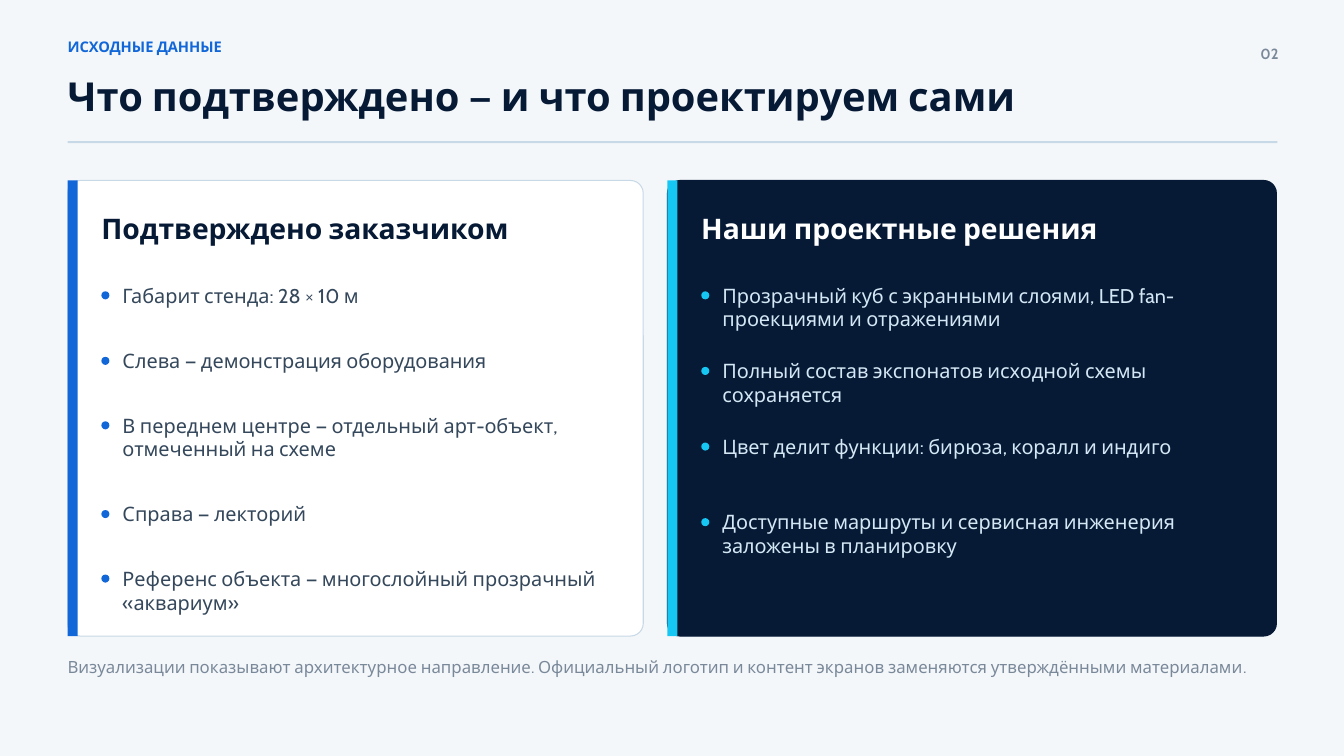
from pptx import Presentation
from pptx.dml.color import RGBColor
from pptx.enum import shapes, text
from pptx.util import Inches, Pt

NAVY, BLUE, CYAN = "061A35", "1167D8", "17C7F3"
WHITE, RULE, GREY = "FFFFFF", "C7D8E6", "7A899A"
KIND = shapes.MSO_SHAPE

deck = Presentation()
deck.slide_width, deck.slide_height = Inches(13.33), Inches(7.5)
slide = deck.slides.add_slide(deck.slide_layouts[6])


def paint(target, color):
    target.solid()
    target.fore_color.rgb = RGBColor.from_string(color)


def add_item(box, color, words=None, size=14.2, bold=False, kind=KIND.RECTANGLE, outline=None):
    """Add a text line when words are given, otherwise a filled shape."""
    place = [Inches(length) for length in box]
    if words is None:
        item = slide.shapes.add_shape(kind, *place)
        item.shadow.inherit = False
        paint(item.fill, color)
        if outline:
            paint(item.line.fill, outline)
            item.line.width = Pt(0.75)
        else:
            item.line.fill.background()
        return item
    frame = slide.shapes.add_textbox(*place).text_frame
    for name, value in {"margin_left": 0, "margin_top": 0, "margin_right": 0,
                        "margin_bottom": 0, "word_wrap": True}.items():
        setattr(frame, name, value)
    line = frame.paragraphs[0]
    run = line.add_run()
    run.text = words
    for name, value in {"name": "Cabin", "size": Pt(size), "bold": bold}.items():
        setattr(run.font, name, value)
    paint(run.font.fill, color)
    return line


paint(slide.background.fill, "F4F7FA")

# Header
add_item((0.67, 0.38, 7.29, 0.23), BLUE, "ИСХОДНЫЕ ДАННЫЕ", 10.5, True)
add_item((0.67, 0.71, 11.25, 0.6), NAVY, "Что подтверждено — и что проектируем сами", 28.5, True)
page_number = add_item((12.24, 0.44, 0.44, 0.25), GREY, "02", 10.5, True)
page_number.alignment = text.PP_ALIGN.RIGHT
add_item((0.67, 1.4, 12, 0.02), RULE)

# Two cards: geometry, colours, heading, then (top, wording) of each point
cards = [
    dict(left=0.67, width=5.71, fill=WHITE, outline=RULE, accent=BLUE,
         heading="Подтверждено заказчиком", heading_color=NAVY,
         point_color="34475B", point_width=4.69,
         points=[(2.81, "Габарит стенда: 28 × 10 м"),
                 (3.46, "Слева — демонстрация оборудования"),
                 (4.1, "В переднем центре — отдельный арт-объект, отмеченный на схеме"),
                 (4.98, "Справа — лекторий"),
                 (5.62, "Референс объекта — многослойный прозрачный «аквариум»")]),
    dict(left=6.62, width=6.04, fill=NAVY, outline=NAVY, accent=CYAN,
         heading="Наши проектные решения", heading_color=WHITE,
         point_color="D4E7F5", point_width=4.85,
         points=[(2.81, "Прозрачный куб с экранными слоями, LED fan-проекциями и отражениями"),
                 (3.56, "Полный состав экспонатов исходной схемы сохраняется"),
                 (4.31, "Цвет делит функции: бирюза, коралл и индиго"),
                 (5.06, "Доступные маршруты и сервисная инженерия заложены в планировку")]),
]
for card in cards:
    left, accent = card["left"], card["accent"]
    panel = add_item((left, 1.79, card["width"], 4.52), card["fill"],
                     kind=KIND.ROUNDED_RECTANGLE, outline=card["outline"])
    panel.adjustments[0] = 0.028
    add_item((left, 1.79, 0.1, 4.52), accent)
    inner = left + 0.335
    add_item((inner, 2.1, 4.9, 0.4), card["heading_color"], card["heading"], 20.2, True)
    for top, words in card["points"]:
        add_item((inner, top + 0.08, 0.08, 0.08), accent, kind=KIND.OVAL)
        add_item((inner + 0.21, top, card["point_width"], 0.54), card["point_color"], words)

# Footnote
add_item((0.67, 6.52, 12, 0.44), GREY,
         "Визуализации показывают архитектурное направление. Официальный логотип "
         "и контент экранов заменяются утверждёнными материалами.", 12)

deck.save("out.pptx")
